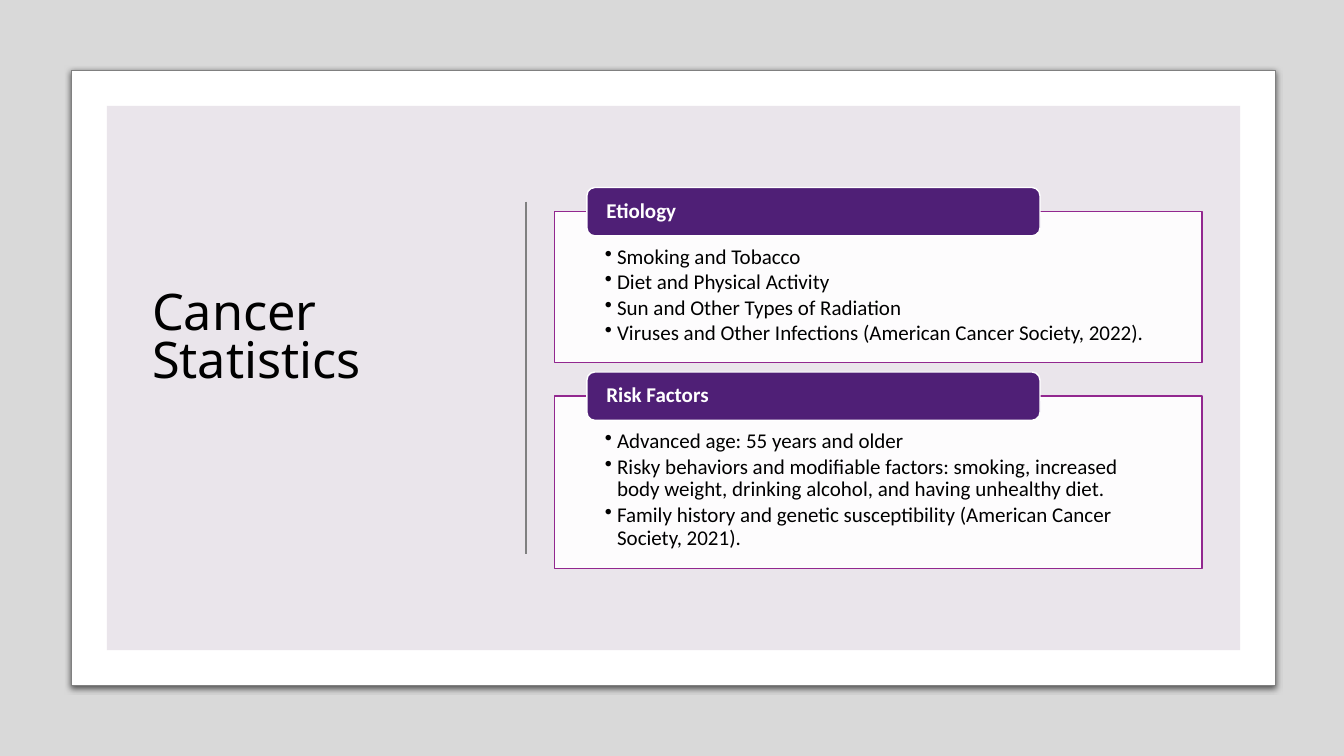
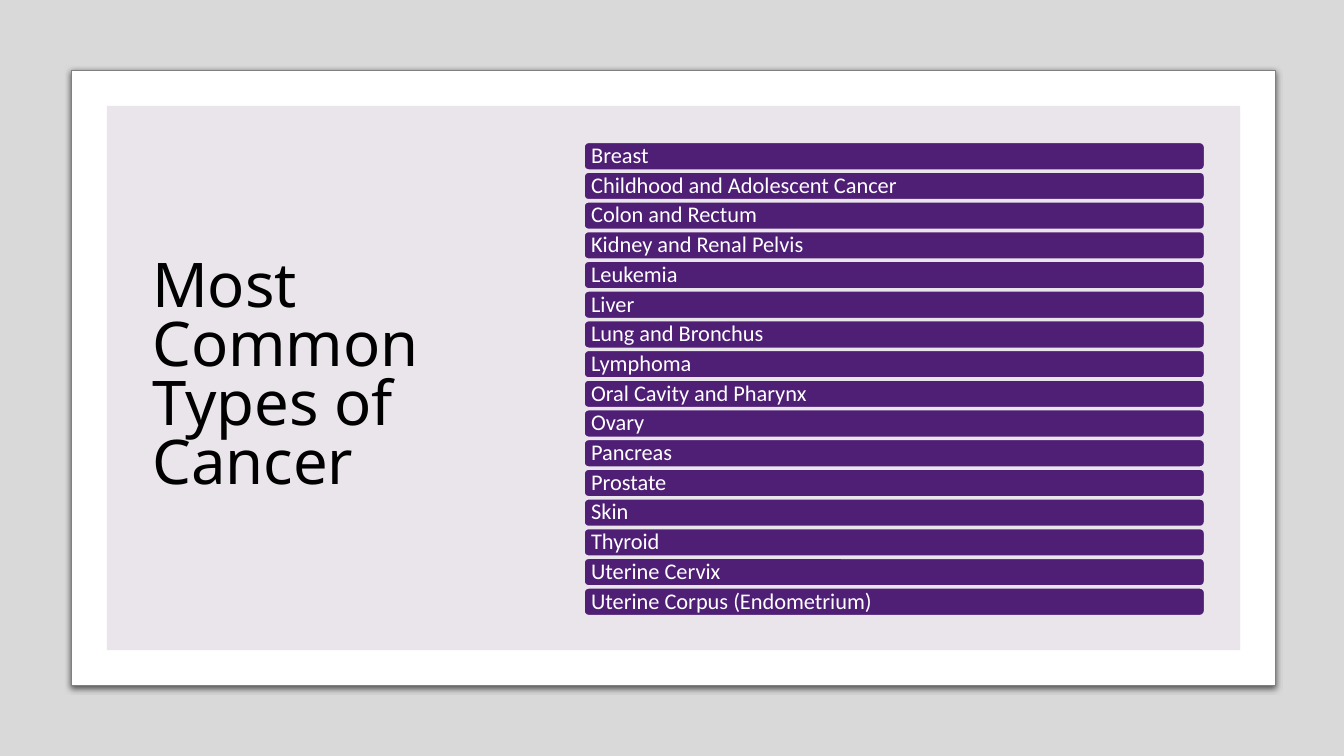
from collections import namedtuple

from lxml.etree import SubElement
from pptx import Presentation
from pptx.dml.color import RGBColor
from pptx.enum.shapes import MSO_CONNECTOR, MSO_SHAPE
from pptx.enum.text import MSO_ANCHOR, PP_ALIGN
from pptx.oxml.ns import qn
from pptx.util import Inches, Pt

COLORS = {
    "backdrop": "D9D9D9",
    "card": "FFFFFF",
    "mat": "EAE5EB",
    "rule": "808080",
    "purple": "4F1F76",
    "magenta": "92278F",
    "panel": "FDFCFD",
    "dark": "000000",
    "light": "FFFFFF",
}
TITLE_FONT = "Noto Sans"
BODY_FONT = "Calibri"

Box = namedtuple("Box", "left top width height")

SLIDE = Box(0, 0, 13.33, 7.5)
CARD = Box(0.71, 0.7, 11.94, 6.1)
MAT_MARGIN = 0.35
TAB_HEIGHT = 0.48
BAR_HEIGHT = 0.28

FACTORS = [
    (Box(5.5, 2.1, 6.42, 1.5), "Etiology", [
        "Smoking and Tobacco",
        "Diet and Physical Activity",
        "Sun and Other Types of Radiation",
        "Viruses and Other Infections (American Cancer Society, 2022).",
    ]),
    (Box(5.5, 3.93, 6.42, 1.71), "Risk Factors", [
        "Advanced age: 55 years and older",
        "Risky behaviors and modifiable factors: smoking, increased body "
        "weight, drinking alcohol, and having unhealthy diet.",
        "Family history and genetic susceptibility (American Cancer Society, 2021).",
    ]),
]
CANCER_TYPES = [
    "Breast", "Childhood and Adolescent Cancer", "Colon and Rectum",
    "Kidney and Renal Pelvis", "Leukemia", "Liver", "Lung and Bronchus",
    "Lymphoma", "Oral Cavity and Pharynx", "Ovary", "Pancreas", "Prostate",
    "Skin", "Thyroid", "Uterine Cervix", "Uterine Corpus (Endometrium)",
]


def color(name):
    return RGBColor.from_string(COLORS[name])


def inches(box):
    return [Inches(value) for value in box]


def add_block(page, box, fill, line=None, line_width=1, kind=MSO_SHAPE.RECTANGLE):
    block = page.shapes.add_shape(kind, *inches(box))
    block.shadow.inherit = False
    block.fill.solid()
    block.fill.fore_color.rgb = color(fill)
    if line:
        block.line.color.rgb = color(line)
        block.line.width = Pt(line_width)
    else:
        block.line.fill.background()
    return block


def add_shadow(block):
    effects = block._element.spPr.find(qn("a:effectLst"))
    shadow = SubElement(effects, qn("a:outerShdw"), blurRad=str(Pt(4.5)),
                        dist=str(Pt(1.5)), dir="5400000", algn="ctr", rotWithShape="0")
    tint = SubElement(shadow, qn("a:srgbClr"), val=COLORS["dark"])
    SubElement(tint, qn("a:alpha"), val="63000")


def add_bullet(para):
    properties = para._p.get_or_add_pPr()
    properties.set("marL", str(Inches(0.12)))
    properties.set("indent", str(-Inches(0.12)))
    SubElement(properties, qn("a:buChar"), char="•")


def write(shape, lines, size, ink, font=BODY_FONT, insets=(0, 0, 0, 0), bold=False,
          anchor=MSO_ANCHOR.MIDDLE, spacing=0.9, after=0, bullets=False):
    frame = shape.text_frame
    frame.word_wrap = True
    frame.vertical_anchor = anchor
    (frame.margin_left, frame.margin_top,
     frame.margin_right, frame.margin_bottom) = inches(insets)
    for index, line in enumerate(lines):
        para = frame.add_paragraph() if index else frame.paragraphs[0]
        para.text = line
        para.alignment = PP_ALIGN.LEFT
        para.line_spacing = spacing
        para.space_after = Pt(after)
        if bullets:
            add_bullet(para)
        para.font.name = font
        para.font.size = Pt(size)
        para.font.bold = bold
        para.font.color.rgb = color(ink)


def add_page(deck):
    page = deck.slides.add_slide(deck.slide_layouts[6])
    page.background.fill.solid()
    page.background.fill.fore_color.rgb = color("backdrop")
    add_shadow(add_block(page, CARD, "card", "rule", 0.75))
    mat = Box(CARD.left + MAT_MARGIN, CARD.top + MAT_MARGIN,
              CARD.width - 2 * MAT_MARGIN, CARD.height - 2 * MAT_MARGIN)
    add_block(page, mat, "mat")
    return page


def add_title(page, box, text, size):
    title = page.shapes.add_textbox(*inches(box))
    write(title, [text], size, "dark", TITLE_FONT, (0.1, 0.05, 0.1, 0.05), spacing=0.8)


def add_divider(page, box):
    divider = page.shapes.add_connector(
        MSO_CONNECTOR.STRAIGHT, Inches(box.left), Inches(box.top),
        Inches(box.left + box.width), Inches(box.top + box.height))
    divider.line.color.rgb = color("rule")
    divider.line.width = Pt(1.5)
    SubElement(divider._element.spPr, qn("a:effectLst"))


def add_tabbed_panel(page, box, heading, items):
    panel = add_block(page, box, "panel", "magenta")
    write(panel, items, 15, "dark", insets=(0.5, 0.34, 0.5, 0.12),
          anchor=MSO_ANCHOR.TOP, after=2.1, bullets=True)
    tab_box = Box(box.left + box.width * 0.05, box.top - TAB_HEIGHT / 2,
                  box.width * 0.7, TAB_HEIGHT)
    tab = add_block(page, tab_box, "purple", "light", kind=MSO_SHAPE.ROUNDED_RECTANGLE)
    write(tab, [heading], 15, "light", insets=(0.17, 0, 0.17, 0), bold=True)


def add_bar_list(page, box, items):
    pitch = (box.height - BAR_HEIGHT) / (len(items) - 1)
    for index, item in enumerate(items):
        bar_box = Box(box.left, box.top + index * pitch, box.width, BAR_HEIGHT)
        bar = add_block(page, bar_box, "purple", "mat", 1.5, MSO_SHAPE.ROUNDED_RECTANGLE)
        write(bar, [item], 16, "light", insets=(0.06, 0, 0.06, 0))


def build_statistics(deck):
    page = add_page(deck)
    add_title(page, Box(1.41, 1.5, 3.51, 3.75), "Cancer Statistics", 36)
    add_divider(page, Box(5.22, 2, 0, 3.5))
    for box, heading, items in FACTORS:
        add_tabbed_panel(page, box, heading, items)


def build_types(deck):
    page = add_page(deck)
    add_title(page, Box(1.41, 1.4, 3.78, 4.71), "Most Common Types of Cancer", 44)
    add_bar_list(page, Box(5.79, 1.41, 6.16, 4.7), CANCER_TYPES)


def main():
    deck = Presentation()
    deck.slide_width = Inches(SLIDE.width)
    deck.slide_height = Inches(SLIDE.height)
    build_statistics(deck)
    build_types(deck)
    deck.save("out.pptx")


if __name__ == "__main__":
    main()
